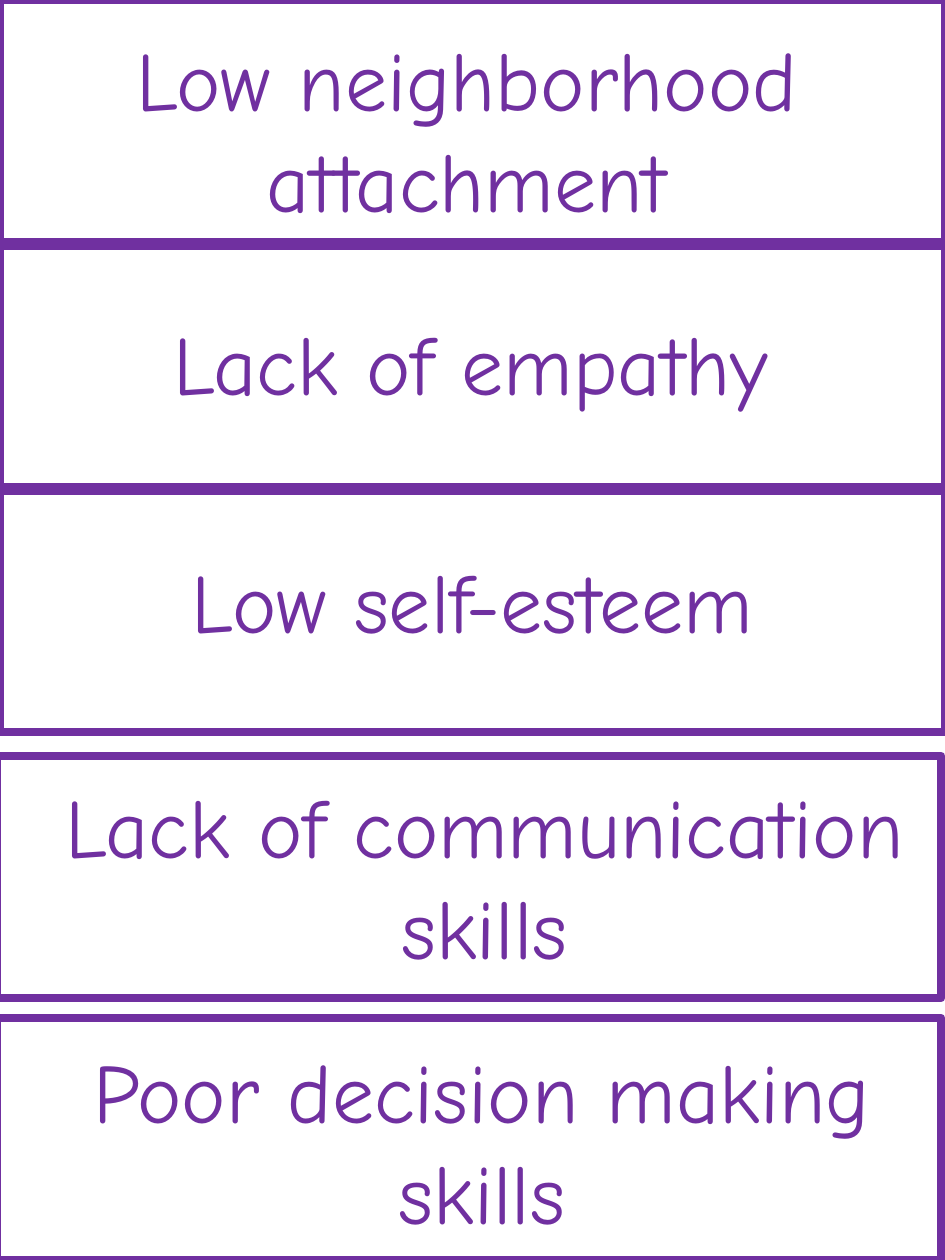
"""Build a sheet of five outlined risk-factor cards."""
from dataclasses import dataclass

import pptx
import pptx.dml.color
import pptx.enum.shapes
import pptx.enum.text
import pptx.util

COLS, ROWS = 750, 1000
CARD_COLS, CARD_ROWS = 750, 192


@dataclass(frozen=True)
class Theme:
    purple: pptx.dml.color.RGBColor = pptx.dml.color.RGBColor(0x70, 0x30, 0xA0)
    font: str = "Comic Neue"
    size: pptx.util.Pt = pptx.util.Pt(48)
    border: pptx.util.Pt = pptx.util.Pt(5)


@dataclass(frozen=True)
class Area:
    col: float
    row: float
    cols: float
    rows: float


@dataclass(frozen=True)
class Card:
    text: str
    col: float
    row: float
    label: Area


THEME = Theme()
CARDS = [
    Card("Low neighborhood attachment", 0, 0, Area(0, 17, 741, 172)),
    Card("Lack of empathy", 0, 195, Area(0, 242, 747, 91)),
    Card("Low self-esteem", 0, 389, Area(12, 431, 726, 91)),
    Card("Lack of communication skills", -3, 600, Area(11, 610, 747, 172)),
    Card("Poor decision making skills", -3, 808, Area(9, 820, 747, 172)),
]


def set_all(target: object, values: dict) -> None:
    for name, value in values.items():
        setattr(target, name, value)


def place(prs, area: Area) -> tuple[int, int, int, int]:
    w, h = prs.slide_width, prs.slide_height
    return (round(area.col * w / COLS), round(area.row * h / ROWS),
            round(area.cols * w / COLS), round(area.rows * h / ROWS))


def draw_frame(prs, s, card: Card) -> None:
    area = Area(card.col, card.row, CARD_COLS, CARD_ROWS)
    sp = s.shapes.add_shape(pptx.enum.shapes.MSO_SHAPE.RECTANGLE, *place(prs, area))
    sp.shadow.inherit = False
    sp.fill.background()
    sp.line.color.rgb = THEME.purple
    sp.line.width = THEME.border


def draw_label(prs, s, card: Card) -> None:
    tf = s.shapes.add_textbox(*place(prs, card.label)).text_frame
    set_all(tf, {"word_wrap": True,
                 "auto_size": pptx.enum.text.MSO_AUTO_SIZE.SHAPE_TO_FIT_TEXT})
    p = tf.paragraphs[0]
    p.alignment = pptx.enum.text.PP_ALIGN.CENTER
    r = p.add_run()
    r.text = card.text
    set_all(r.font, {"name": THEME.font, "size": THEME.size})
    r.font.color.rgb = THEME.purple


def main() -> None:
    prs = pptx.Presentation()
    set_all(prs, {"slide_width": pptx.util.Inches(7.5),
                  "slide_height": pptx.util.Inches(10)})
    s = prs.slides.add_slide(prs.slide_layouts[6])
    for draw in (draw_frame, draw_label):
        for card in CARDS:
            draw(prs, s, card)
    prs.save("out.pptx")


if __name__ == "__main__":
    main()
